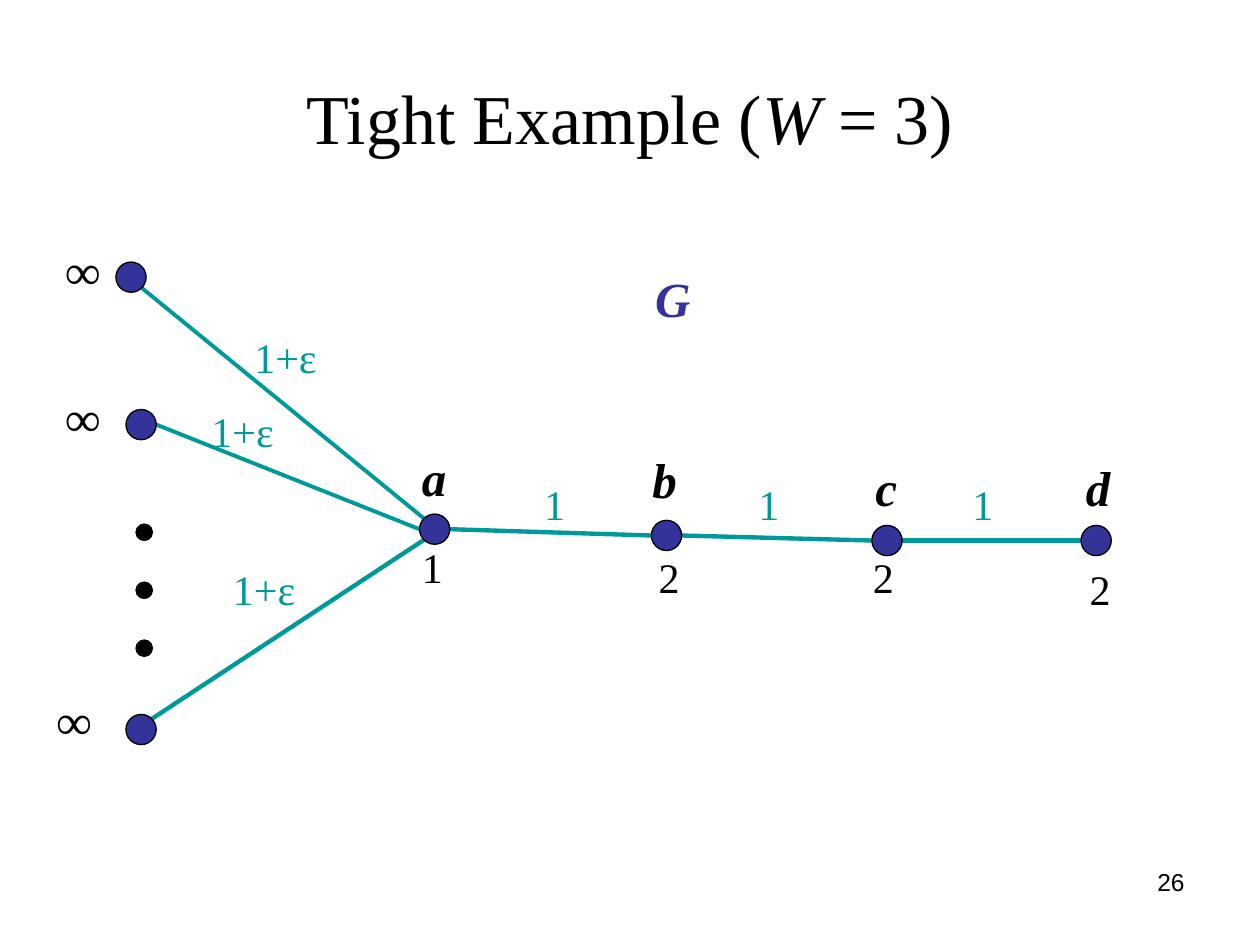
from dataclasses import dataclass

from lxml import etree
from pptx import Presentation
from pptx.dml.color import RGBColor
from pptx.enum import shapes, text
from pptx.oxml import ns
from pptx.util import Inches, Pt


@dataclass(frozen=True)
class Theme:
    serif: str = "Times New Roman"
    sans: str = "Arial"
    ink: RGBColor = RGBColor(0, 0, 0)
    node: RGBColor = RGBColor(0x33, 0x33, 0x99)
    edge: RGBColor = RGBColor(0, 0x99, 0x99)
    title: int = 40
    name: int = 28
    weight: int = 24
    number: int = 14


T = Theme()
NODE = 0.24
DOT = 0.13
SITES = {"left": (0, 0.5), "right": (1, 0.5), "top_left": (0.15, 0.15),
         "bottom_left": (0.15, 0.85), "bottom_right": (0.85, 0.85),
         "top_right": (0.85, 0.15)}

NODES = {"u1": (0.57, 0.23), "u2": (0.65, 1.4), "u3": (0.65, 3.82),
         "a": (2.98, 2.23), "b": (4.82, 2.28),
         "c": (6.57, 2.32), "d": (8.23, 2.32)}
EDGES = [("a", "top_left", "u1", "bottom_right", 2.25),
         ("a", "left", "u2", "right", 2.25),
         ("a", "bottom_left", "u3", "top_right", 2.5),
         ("a", "right", "b", "left", 2.5),
         ("b", "right", "c", "left", 2.5),
         ("c", "right", "d", "left", 2.5)]
NAMES = {"a": (2.9, 1.65), "b": (4.73, 1.67), "c": (6.5, 1.73), "d": (8.17, 1.73)}
NODE_WEIGHTS = [("1", 2.9, 2.4), ("2", 4.78, 2.48), ("2", 6.48, 2.48), ("2", 8.2, 2.57)]
LEAF_WEIGHTS = [(0.07, 0.01), (0.07, 1.18), (0, 3.58)]
FAN_WEIGHTS = [(1.57, 0.73), (1.23, 1.32), (1.4, 2.57)]


def format_font(p, size, color, name=T.serif, bold=False, italic=None):
    f = p.font
    f.name, f.size, f.bold, f.italic = name, Pt(size), bold, italic
    f.color.rgb = color


def add_label(s, words, x, y, w, size, color, bold=False, italic=False):
    h = 0.57 if size == T.name else 0.5
    tf = s.shapes.add_textbox(Inches(x), Inches(y), Inches(w), Inches(h)).text_frame
    tf.word_wrap = False
    tf.auto_size = text.MSO_AUTO_SIZE.SHAPE_TO_FIT_TEXT
    p = tf.paragraphs[0]
    p.text = words
    format_font(p, size, color, bold=bold, italic=italic)


def add_circle(s, x, y, size, color):
    sp = s.shapes.add_shape(shapes.MSO_SHAPE.OVAL, Inches(x), Inches(y),
                            Inches(size), Inches(size))
    sp.shadow.inherit = False
    sp.fill.solid()
    sp.fill.fore_color.rgb = color
    sp.line.color.rgb = T.ink
    sp.line.width = Pt(0.75)


def add_edge(s, x1, y1, x2, y2, width):
    line = s.shapes.add_connector(shapes.MSO_CONNECTOR.STRAIGHT, Inches(x1),
                                  Inches(y1), Inches(x2), Inches(y2))
    line.line.color.rgb = T.edge
    line.line.width = Pt(width)
    etree.SubElement(line._element.spPr, ns.qn("a:effectLst"))


def build_title(s, x, y, w, h):
    sp = s.shapes.title
    sp.left, sp.top, sp.width, sp.height = map(Inches, (x, y, w, h))
    tf = sp.text_frame
    tf.vertical_anchor = text.MSO_ANCHOR.MIDDLE
    p = tf.paragraphs[0]
    p.alignment = text.PP_ALIGN.CENTER
    format_font(p, T.title, T.ink)
    for words, italic in (("Tight Example (", False), ("W", True), (" = 3)", False)):
        r = p.add_run()
        r.text = words
        r.font.italic = italic


def build_graph(s, x, y):
    def site(node, side):
        (nx, ny), (fx, fy) = NODES[node], SITES[side]
        return x + nx + fx * NODE, y + ny + fy * NODE

    for start, start_side, end, end_side, width in EDGES:
        add_edge(s, *site(start, start_side), *site(end, end_side), width)
    for nx, ny in NODES.values():
        add_circle(s, x + nx, y + ny, NODE, T.node)
    for i in range(3):
        add_circle(s, x + 0.73, y + 2.31 + 0.46 * i, DOT, T.ink)

    add_label(s, "G", x + 4.75, y + 0.23, 0.48, T.name, T.node, True, True)
    for name, (nx, ny) in NAMES.items():
        add_label(s, name, x + nx, y + ny, 0.4, T.name, T.ink, True, True)
    for nx, ny in LEAF_WEIGHTS:
        add_label(s, "∞", x + nx, y + ny, 0.48, T.name, T.ink, True)
    for words, nx, ny in NODE_WEIGHTS:
        add_label(s, words, x + nx, y + ny, 0.37, T.weight, T.ink)
    for nx, ny in FAN_WEIGHTS:
        add_label(s, "1+ε", x + nx, y + ny, 0.7, T.weight, T.edge)
    for i in range(3):
        add_label(s, "1", x + 3.87 + 1.7 * i, y + 1.9, 0.37, T.weight, T.edge)


def build_number(s, x, y, w, h):
    tf = s.shapes.add_textbox(Inches(x), Inches(y), Inches(w), Inches(h)).text_frame
    tf.word_wrap = True
    p = tf.paragraphs[0]
    p.text = "26"
    p.alignment = text.PP_ALIGN.RIGHT
    format_font(p, T.number, T.ink, T.sans)


def main():
    prs = Presentation()
    prs.slide_width, prs.slide_height = Inches(10), Inches(7.5)
    s = prs.slides.add_slide(prs.slide_layouts[5])
    build_title(s, 0.5, 0.3, 9, 1.25)
    build_graph(s, 0.35, 1.85)
    build_number(s, 7.17, 6.83, 2.33, 0.52)
    prs.save("out.pptx")


if __name__ == "__main__":
    main()
